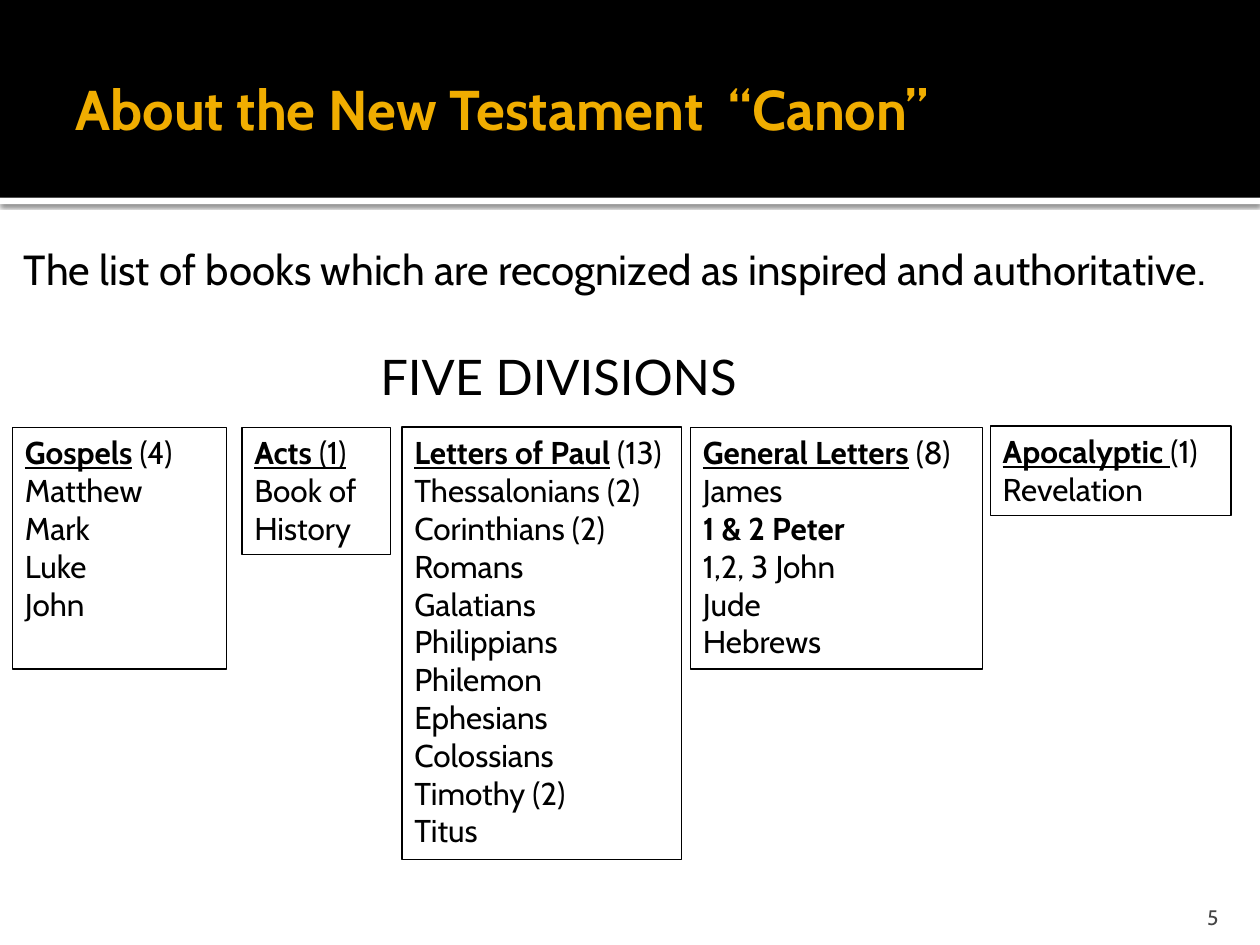
from lxml import etree
from pptx import Presentation
from pptx.dml.color import RGBColor
from pptx.enum.shapes import MSO_SHAPE
from pptx.enum.text import MSO_ANCHOR, MSO_AUTO_SIZE, PP_ALIGN
from pptx.oxml import parse_xml
from pptx.util import Inches, Pt

RECT = MSO_SHAPE.RECTANGLE
MIDDLE, BOTTOM = MSO_ANCHOR.MIDDLE, MSO_ANCHOR.BOTTOM
LEFT, RIGHT = PP_ALIGN.LEFT, PP_ALIGN.RIGHT
FIXED = MSO_AUTO_SIZE.NONE
BLACK = RGBColor(0x00, 0x00, 0x00)
WHITE = RGBColor(0xFF, 0xFF, 0xFF)
GOLD = RGBColor(0xF0, 0xAD, 0x00)
GREY = RGBColor(0x45, 0x45, 0x45)
NS = "http://schemas.openxmlformats.org/drawingml/2006/main"


def add_run(para, text, size, color=BLACK, font="Cabin", bold=False, line=False):
    run = para.add_run()
    run.text = text
    run.font.size = Pt(size)
    run.font.name = font
    run.font.color.rgb = color
    run.font.bold = bold
    run.font.underline = line


def set_frame(shape, place, insets=(0.1, 0.05, 0.1, 0.05)):
    shape.left, shape.top, shape.width, shape.height = map(Inches, place)
    frame = shape.text_frame
    frame.word_wrap = True
    frame.auto_size = FIXED
    (frame.margin_left, frame.margin_top,
     frame.margin_right, frame.margin_bottom) = map(Inches, insets)
    return frame


deck = Presentation()
deck.slide_width, deck.slide_height = Inches(10), Inches(7.5)
slide = deck.slides.add_slide(deck.slide_layouts[1])
shapes = slide.shapes
title, body = slide.placeholders

# Header bands: white strip with a shadow, then the black band
for top, high, color in ((1.57, 0.05, WHITE), (0, 1.57, BLACK)):
    band = shapes.add_shape(RECT, 0, Inches(top), Inches(10), Inches(high))
    band.fill.solid()
    band.fill.fore_color.rgb = color
    band.line.fill.background()
    band.shadow.inherit = False
    if color == WHITE:
        effects = band._element.spPr.find(f"{{{NS}}}effectLst")
        effects.append(parse_xml(
            f'<a:outerShdw xmlns:a="{NS}" blurRad="{Pt(2.5)}" dist="{Pt(0.8)}" '
            'dir="5400000" algn="tl" rotWithShape="0"><a:srgbClr val="000000">'
            '<a:alpha val="60000"/></a:srgbClr></a:outerShdw>'))

# Title and body, brought in front of the bands
for holder in (title, body):
    shapes._spTree.append(holder._element)

frame = set_frame(title, (0.5, 0.17, 9, 1.37), (0.1, 0.05, 0.05, 0.05))
frame.vertical_anchor = MIDDLE
para = frame.paragraphs[0]
para.alignment = LEFT
add_run(para, "About the New Testament  “Canon”", 32, GOLD, bold=True)

frame = set_frame(body, (0, 1.83, 10, 5.58), (0.06, 0.1, 0.1, 0.05))
para = frame.paragraphs[0]
para.space_before = Pt(0)
props = para._p.get_or_add_pPr()
props.set("marL", str(Inches(0.13)))
props.set("indent", "0")
etree.SubElement(props, f"{{{NS}}}buNone")
add_run(para, "The list of books which are recognized as inspired and authoritative.", 24)

# Five divisions: place, heading, count, is the count underlined, books
groups = [
    ((0.1, 3.39, 1.7, 1.92), "Gospels", " (4)", False,
     ["Matthew", "Mark", "Luke", "John"]),
    ((1.92, 3.39, 1.18, 1.01), "Acts ", "(1)", True, ["Book of History"]),
    ((3.19, 3.39, 2.22, 3.43), "Letters of Paul", " (13)", False,
     ["Thessalonians (2)", "Corinthians (2)", "Romans", "Galatians",
      "Philippians", "Philemon", "Ephesians", "Colossians", "Timothy (2)",
      "Titus"]),
    ((5.48, 3.39, 2.32, 1.92), "General Letters", " (8)", False,
     ["James", "1 & 2 Peter", "1,2, 3 John", "Jude", "Hebrews"]),
    ((7.86, 3.38, 1.91, 0.71), "Apocalyptic ", "(1)", False, ["Revelation"]),
]
for place, head, count, line, books in groups:
    box = shapes.add_textbox(0, 0, 0, 0)
    box.line.color.rgb = BLACK
    box.line.width = Pt(0.75)
    frame = set_frame(box, place)
    para = frame.paragraphs[0]
    add_run(para, head, 18, bold=True, line=True)
    add_run(para, count, 18, line=line)
    for book in books:
        add_run(frame.add_paragraph(), book, 18, bold=book == "1 & 2 Peter")

# Heading above the boxes
frame = set_frame(shapes.add_textbox(0, 0, 0, 0), (2.92, 2.7, 3.09, 0.57))
add_run(frame.paragraphs[0], "FIVE DIVISIONS", 28, font="Lato")

# Page number
frame = set_frame(shapes.add_textbox(0, 0, 0, 0), (8.97, 7.08, 0.8, 0.3),
                  (0.1, 0.05, 0.1, 0))
frame.vertical_anchor = BOTTOM
para = frame.paragraphs[0]
para.alignment = RIGHT
add_run(para, "5", 12, GREY)

deck.save("out.pptx")
